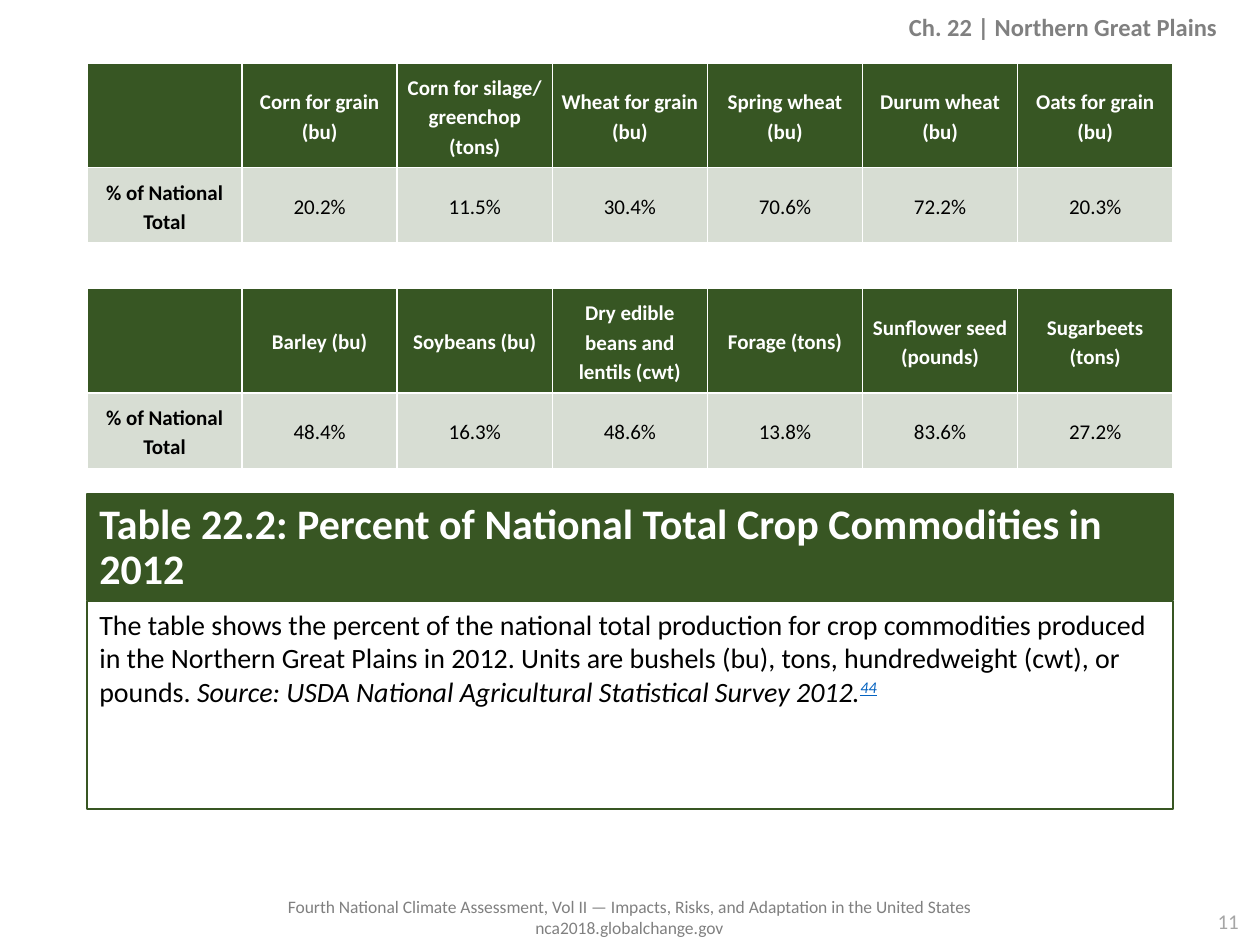
from dataclasses import dataclass

from lxml import etree
from pptx import Presentation
from pptx.dml.color import RGBColor
from pptx.enum.shapes import MSO_SHAPE
from pptx.enum.text import MSO_ANCHOR, PP_ALIGN
from pptx.oxml.ns import qn
from pptx.util import Pt

RECT = MSO_SHAPE.RECTANGLE
TOP, MID, LOW = MSO_ANCHOR.TOP, MSO_ANCHOR.MIDDLE, MSO_ANCHOR.BOTTOM
LEFT, MIDST, RIGHT = PP_ALIGN.LEFT, PP_ALIGN.CENTER, PP_ALIGN.RIGHT

HUES = {
    "edge": "385623",
    "head": "375623",
    "pale": "D7DDD3",
    "white": "FFFFFF",
    "black": "000000",
    "gray": "808080",
    "light": "A6A6A6",
    "blue": "0563C1",
}
FONT = "Calibri"
SIDE, WIDE = 49.68, 620.64
HEAD_H, DATA_H, GAP_H = 59.04, 42.48, 25.92
PAD = 5.04
LABEL = "% of National Total"


@dataclass
class Run:
    text: str
    size: float
    hue: str
    bold: bool = False
    slant: bool = False
    line: bool = False
    lift: int = 0


@dataclass
class Box:
    left: float
    top: float
    width: float
    height: float
    paras: list[list[Run]]
    align: PP_ALIGN = LEFT
    anchor: MSO_ANCHOR = TOP
    space: float = 1.0
    after: float = 0
    edge: str = ""
    fill: str = ""


@dataclass
class Row:
    height: float
    fill: str
    hue: str
    bold: bool
    texts: list[str]


def tint(name: str) -> RGBColor:
    return RGBColor.from_string(HUES[name])


def add_run(para, item: Run) -> None:
    for num, part in enumerate(item.text.split("\n")):
        if num:
            para.add_line_break()
        run = para.add_run()
        run.text = part
        font = run.font
        font.name = FONT
        font.size = Pt(item.size)
        font.bold = item.bold
        font.italic = item.slant
        font.underline = item.line
        font.color.rgb = tint(item.hue)
        if item.lift:
            run._r.get_or_add_rPr().set("baseline", str(item.lift * 1000))


def add_box(slide, box: Box) -> None:
    area = [Pt(v) for v in (box.left, box.top, box.width, box.height)]
    if box.edge:
        shape = slide.shapes.add_shape(RECT, *area)
        shape.shadow.inherit = False
        shape.line.color.rgb = tint(box.edge)
        shape.line.width = Pt(1.5)
        if box.fill:
            shape.fill.solid()
            shape.fill.fore_color.rgb = tint(box.fill)
        else:
            shape.fill.background()
    else:
        shape = slide.shapes.add_textbox(*area)
    frame = shape.text_frame
    frame.word_wrap = True
    frame.vertical_anchor = box.anchor
    for num, runs in enumerate(box.paras):
        para = frame.add_paragraph() if num else frame.paragraphs[0]
        para.alignment = box.align
        para.line_spacing = box.space
        para.space_after = Pt(box.after)
        for item in runs:
            add_run(para, item)


def add_edges(cell) -> None:
    props = cell._tc.get_or_add_tcPr()
    for side in ("lnL", "lnR", "lnT", "lnB"):
        line = etree.SubElement(props, qn(f"a:{side}"), w=str(Pt(1)))
        fill = etree.SubElement(line, qn("a:solidFill"))
        etree.SubElement(fill, qn("a:srgbClr"), val=HUES["white"])


def fill_cell(cell, row: Row, text: str, bold: bool) -> None:
    add_edges(cell)
    cell.fill.solid()
    cell.fill.fore_color.rgb = tint(row.fill)
    cell.vertical_anchor = MID
    cell.margin_left = cell.margin_right = Pt(PAD)
    cell.margin_top = cell.margin_bottom = Pt(PAD if text else 0)
    if text:
        para = cell.text_frame.paragraphs[0]
        para.alignment = MIDST
        para.line_spacing = 1.15
        para.space_after = Pt(6)
        add_run(para, Run(text, 12, row.hue, bold))


def add_grid(slide, top: float, rows: list[Row]) -> None:
    count = len(rows[0].texts)
    high = sum(row.height for row in rows)
    frame = slide.shapes.add_table(
        len(rows), count, Pt(SIDE), Pt(top), Pt(WIDE), Pt(high))
    table = frame.table
    for col in table.columns:
        col.width = Pt(WIDE / count)
    for r, row in enumerate(rows):
        table.rows[r].height = Pt(row.height)
        for c, text in enumerate(row.texts):
            fill_cell(table.cell(r, c), row, text, row.bold or c == 0)


def head_row(*names: str) -> Row:
    return Row(HEAD_H, "head", "white", True, ["", *names])


def data_row(*rates: float) -> Row:
    texts = [LABEL, *(f"{rate}%" for rate in rates)]
    return Row(DATA_H, "pale", "black", False, texts)


ROWS = [
    head_row("Corn for grain (bu)", "Corn for silage/\ngreenchop (tons)",
             "Wheat for grain (bu)", "Spring wheat (bu)",
             "Durum wheat (bu)", "Oats for grain (bu)"),
    data_row(20.2, 11.5, 30.4, 70.6, 72.2, 20.3),
    Row(GAP_H, "white", "black", False, [""] * 7),
    head_row("Barley (bu)", "Soybeans (bu)",
             "Dry edible beans and lentils (cwt)", "Forage (tons)",
             "Sunflower seed (pounds)", "Sugarbeets (tons)"),
    data_row(48.4, 16.3, 48.6, 13.8, 83.6, 27.2),
]

BOXES = [
    Box(146.16, 508.32, 426.96, 31.68, [
        [Run("Fourth National Climate Assessment, Vol II — Impacts, Risks, "
             "and Adaptation in the United States", 10, "gray")],
        [Run("nca2018.globalchange.gov", 10, "gray")],
    ], MIDST),
    Box(577.44, 515.52, 137.52, 19.44, [[Run("11", 12, "light")]], RIGHT),
    Box(SIDE, 282.24, WIDE, 60.48, [
        [Run("Table 22.2: Percent of National Total Crop Commodities in 2012",
             24, "white", bold=True)],
    ], anchor=LOW, space=0.9, edge="edge", fill="edge"),
    Box(SIDE, 343.44, WIDE, 118.8, [[
        Run("The table shows the percent of the national total production for "
            "crop commodities produced in the Northern Great Plains in 2012. "
            "Units are bushels (bu), tons, hundredweight (cwt), or pounds. ",
            16, "black"),
        Run("Source: USDA National Agricultural Statistical Survey 2012.",
            16, "black", slant=True),
        Run("44", 16, "blue", slant=True, line=True, lift=30),
    ]], after=6, edge="edge"),
    Box(16.56, 5.04, 686.16, 22.32, [
        [Run("Ch. 22 | Northern Great Plains", 14, "gray", bold=True)],
    ], RIGHT, MID, 0.9),
]


def main() -> None:
    deck = Presentation()
    deck.slide_width, deck.slide_height = Pt(720), Pt(540)
    slide = deck.slides.add_slide(deck.slide_layouts[6])
    for box in BOXES:
        add_box(slide, box)
    add_grid(slide, 36, ROWS)
    deck.save("out.pptx")


if __name__ == "__main__":
    main()
